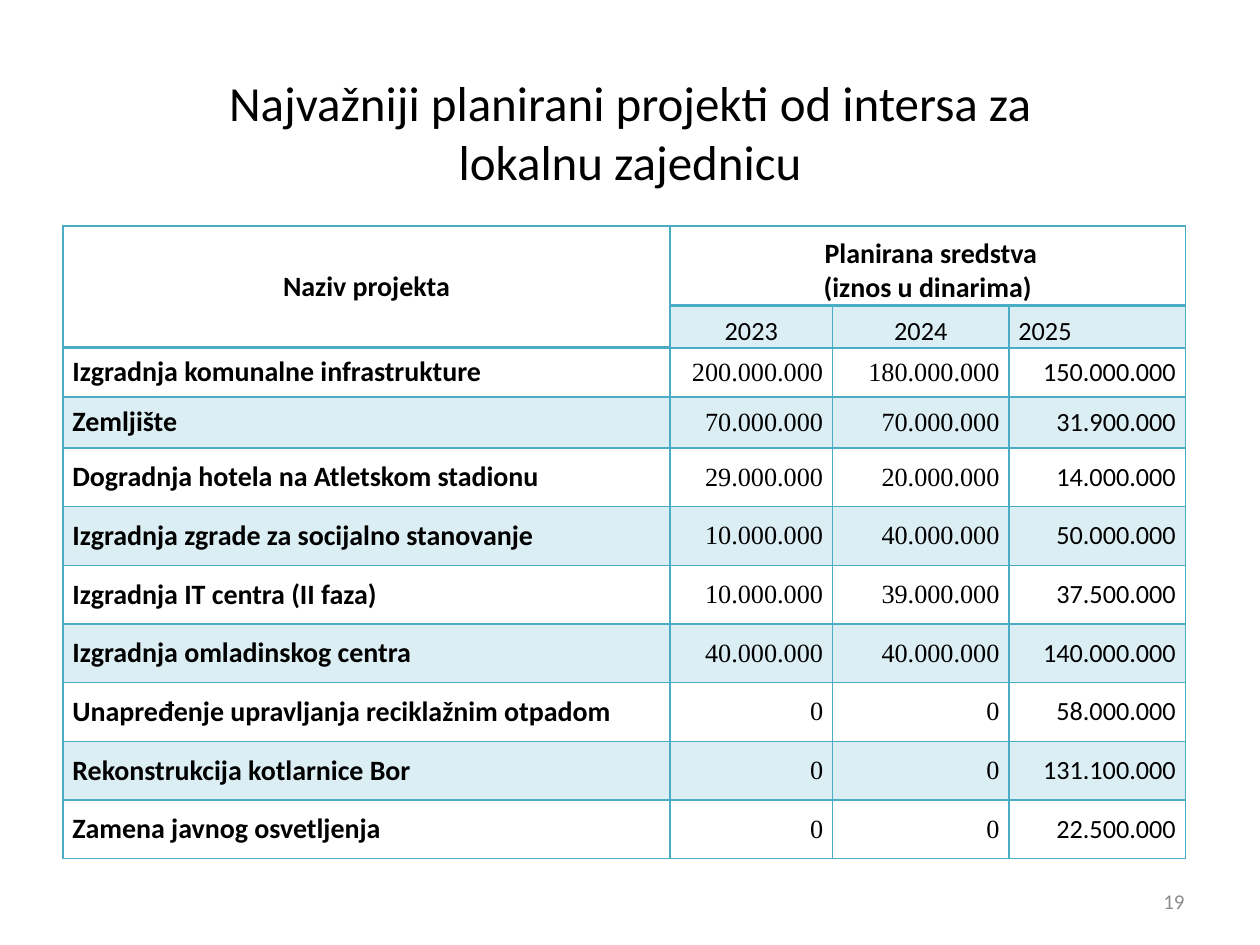
from lxml.etree import SubElement
from pptx import Presentation
from pptx.dml.color import RGBColor as RGB
from pptx.enum.text import MSO_ANCHOR as ANCHOR, PP_ALIGN as ALIGN
from pptx.oxml.ns import qn
from pptx.util import Pt

THEME = {
    "text": "000000", "muted": "8C8C8C", "border": "4BACC6", "band": "DBEEF4",
    "sans": "Calibri", "serif": "Times New Roman",
    "title": 28, "label": 16, "amount": 15, "number": 12,
    "thin": 1, "heavy": 2,
}
TITLE = "Najvažniji planirani projekti od intersa za\vlokalnu zajednicu"
PAGE_NUMBER = "19"
PROJECT_HEADING = "Naziv projekta"
FUNDS_HEADING = [" Planirana sredstva", "(iznos u dinarima)"]
YEARS = ["2023", "2024", "2025"]
PROJECTS = [
    ("Izgradnja komunalne infrastrukture", "200.000.000", "180.000.000", "150.000.000"),
    ("Zemljište", "70.000.000", "70.000.000", "31.900.000"),
    ("Dogradnja hotela na Atletskom stadionu", "29.000.000", "20.000.000", "14.000.000"),
    ("Izgradnja zgrade za socijalno stanovanje", "10.000.000", "40.000.000", "50.000.000"),
    ("Izgradnja IT centra (II faza)", "10.000.000", "39.000.000", "37.500.000"),
    ("Izgradnja omladinskog centra", "40.000.000", "40.000.000", "140.000.000"),
    ("Unapređenje upravljanja reciklažnim otpadom", "0", "0", "58.000.000"),
    ("Rekonstrukcija kotlarnice Bor", "0", "0", "131.100.000"),
    ("Zamena javnog osvetljenja", "0", "0", "22.500.000"),
]
COLUMN_WIDTHS = [346.9, 92.9, 100.8, 100.8]
ROW_HEIGHTS = [45.4, 24.4, 28, 29.2] + [33.55] * 7


def write(frame, text, size="label", font="sans", color="text", bold=False,
          align=ALIGN.LEFT, anchor=ANCHOR.MIDDLE):
    frame.word_wrap = True
    frame.vertical_anchor = anchor
    lines = [text] if isinstance(text, str) else text
    for index, line in enumerate(lines):
        paragraph = frame.add_paragraph() if index else frame.paragraphs[0]
        paragraph.text = line
        paragraph.alignment = align
        for run in paragraph.runs:
            run.font.name = THEME[font]
            run.font.size = Pt(THEME[size])
            run.font.bold = bold
            run.font.color.rgb = RGB.from_string(THEME[color])


def add_text(slide, box, text, **style):
    write(slide.shapes.add_textbox(*map(Pt, box)).text_frame, text, **style)


def heavy_below(row, column):
    return (row == 0) or (row == 1 and column == 0)


def style_cell(cell, row, column):
    cell.margin_left = cell.margin_right = Pt(5.4)
    cell.margin_top = cell.margin_bottom = Pt(0)
    properties = cell._tc.get_or_add_tcPr()
    weights = {
        "L": "thin", "R": "thin",
        "T": "heavy" if row and heavy_below(row - 1, column) else "thin",
        "B": "heavy" if heavy_below(row, column) else "thin",
    }
    for side, weight in weights.items():
        line = SubElement(properties, qn(f"a:ln{side}"), w=str(Pt(THEME[weight])))
        SubElement(SubElement(line, qn("a:solidFill")), qn("a:srgbClr"), val=THEME["border"])
    if row % 2 and not (row == 1 and column == 0):
        cell.fill.solid()
        cell.fill.fore_color.rgb = RGB.from_string(THEME["band"])
    else:
        cell.fill.background()


def add_projects(slide):
    table = slide.shapes.add_table(
        len(ROW_HEIGHTS), len(COLUMN_WIDTHS), Pt(36), Pt(129),
        Pt(sum(COLUMN_WIDTHS)), Pt(sum(ROW_HEIGHTS))).table
    table.first_row = table.horz_banding = False
    for column, width in zip(table.columns, COLUMN_WIDTHS):
        column.width = Pt(width)
    for row, height in enumerate(ROW_HEIGHTS):
        table.rows[row].height = Pt(height)
        for column in range(len(COLUMN_WIDTHS)):
            style_cell(table.cell(row, column), row, column)

    def fill_in(row, column, text, **style):
        cell = table.cell(row, column)
        anchor = style.get("anchor", ANCHOR.MIDDLE)
        write(cell.text_frame, text, **style)
        cell.text_frame._txBody.bodyPr.attrib.clear()
        cell.vertical_anchor = anchor

    table.cell(0, 0).merge(table.cell(1, 0))
    table.cell(0, 1).merge(table.cell(0, 3))
    fill_in(0, 0, PROJECT_HEADING, bold=True, align=ALIGN.CENTER)
    fill_in(0, 1, FUNDS_HEADING, bold=True, align=ALIGN.CENTER, anchor=ANCHOR.BOTTOM)
    for column, year in enumerate(YEARS, 1):
        fill_in(1, column, year, size="amount", anchor=ANCHOR.BOTTOM,
                align=ALIGN.LEFT if year == YEARS[-1] else ALIGN.CENTER)
    for row, (project, *amounts) in enumerate(PROJECTS, 2):
        fill_in(row, 0, project, bold=True)
        for column, amount in enumerate(amounts, 1):
            fill_in(row, column, amount, size="amount", align=ALIGN.RIGHT,
                    font="sans" if column == len(YEARS) else "serif")


def main():
    deck = Presentation()
    deck.slide_width, deck.slide_height = Pt(720), Pt(540)
    slide = deck.slides.add_slide(deck.slide_layouts[6])
    add_text(slide, (36, 21.6, 648, 106.6), TITLE, size="title", align=ALIGN.CENTER)
    add_projects(slide)
    add_text(slide, (516, 500.5, 168, 28.8), PAGE_NUMBER, size="number", color="muted",
             align=ALIGN.RIGHT)
    deck.save("out.pptx")


if __name__ == "__main__":
    main()
